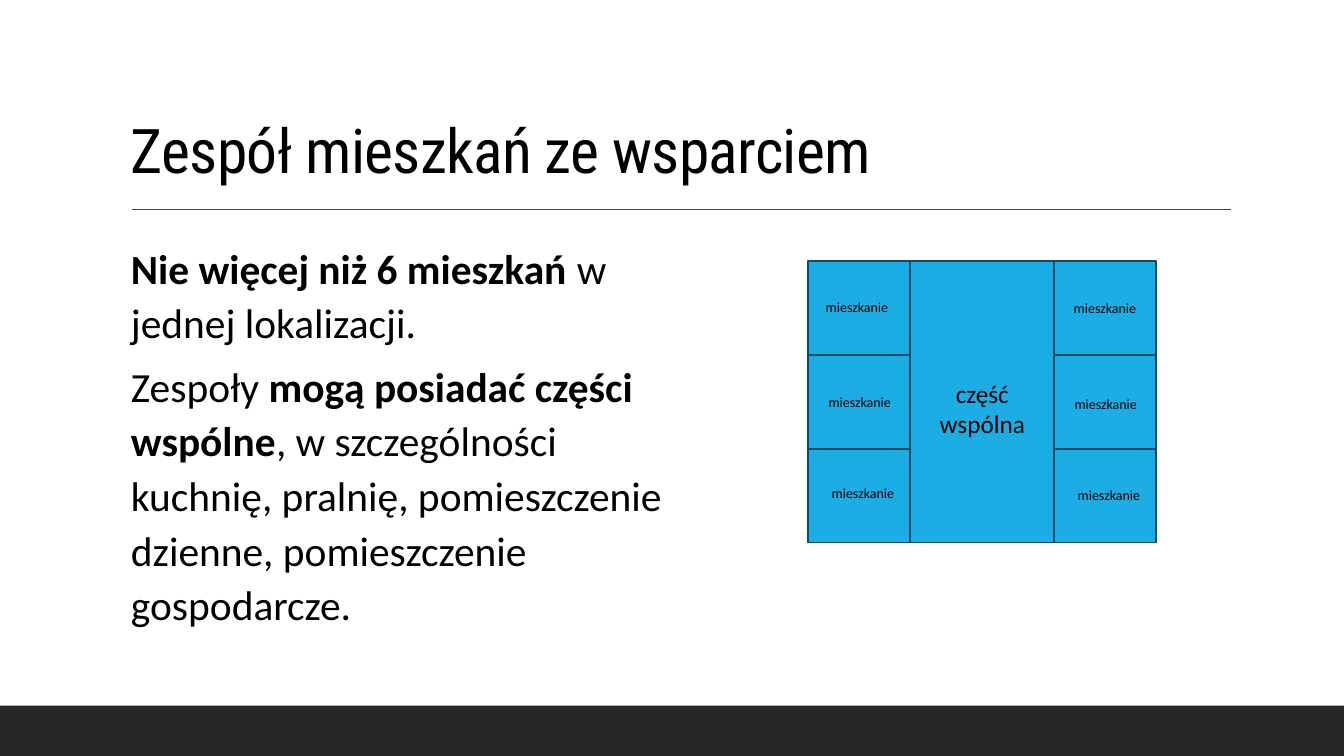
from lxml.etree import SubElement
from pptx import Presentation
from pptx.dml.color import RGBColor
from pptx.enum.shapes import MSO_CONNECTOR, MSO_SHAPE
from pptx.enum.text import MSO_ANCHOR, PP_ALIGN
from pptx.oxml.ns import qn
from pptx.util import Cm, Pt

COLORS = {"text": "000000", "footer": "262626", "rule": "404040",
          "room": "1CADE4", "wall": "0C4C64"}
BODY = [
    [("Nie więcej niż 6 mieszkań ", True), ("w jednej lokalizacji.", False)],
    [("Zespoły ", False), ("mogą posiadać części wspólne", True),
     (", w szczególności kuchnię, pralnię, pomieszczenie dzienne, "
      "pomieszczenie gospodarcze.", False)],
]
LABEL_OFFSETS = [[(0.03, 0.81), (0.1, 0.84), (0.18, 0.79)],
                 [(0.08, 0.84), (0.1, 0.89), (0.18, 0.84)]]


def color(name):
    return RGBColor.from_string(COLORS[name])


def add_rectangle(page, box, fill, line=None):
    shape = page.shapes.add_shape(MSO_SHAPE.RECTANGLE, *map(Cm, box))
    shape.shadow.inherit = False
    shape.fill.solid()
    shape.fill.fore_color.rgb = color(fill)
    if line:
        shape.line.color.rgb = color(line)
        shape.line.width = Pt(1.25)
    else:
        shape.line.fill.background()


def add_text_frame(page, box):
    frame = page.shapes.add_textbox(*map(Cm, box)).text_frame
    frame.word_wrap = True
    return frame


def style(para, size, name="Calibri"):
    para.font.size = Pt(size)
    para.font.name = name
    para.font.color.rgb = color("text")


def add_label(page, box, text, size):
    para = add_text_frame(page, box).paragraphs[0]
    para.text = text
    para.alignment = PP_ALIGN.CENTER
    style(para, size)


def add_title(page, box):
    left, top, width, height = box
    frame = add_text_frame(page, box)
    frame.vertical_anchor = MSO_ANCHOR.BOTTOM
    para = frame.paragraphs[0]
    para.line_spacing = 0.9
    style(para, 44, "Roboto Condensed")
    span = para.add_run()
    span.text = "Zespół mieszkań ze wsparciem"
    span.font._element.set("spc", "-50")

    rule_top = Cm(top + height + 0.45)
    rule = page.shapes.add_connector(
        MSO_CONNECTOR.STRAIGHT, Cm(left + 0.28), rule_top, Cm(left + width + 0.02), rule_top)
    rule.line.color.rgb = color("rule")
    rule.line.width = Pt(1)
    SubElement(rule._element.spPr, qn("a:effectLst"))


def add_body(page, box):
    frame = add_text_frame(page, box)
    frame.margin_left = Cm(0.25)
    frame.margin_right = 0
    for index, spans in enumerate(BODY):
        para = frame.add_paragraph() if index else frame.paragraphs[0]
        para.line_spacing = 1.1
        para.space_before = Pt(2)
        para.space_after = Pt(4)
        style(para, 29.6)
        for text, bold in spans:
            span = para.add_run()
            span.text = text
            span.font.bold = bold


def add_floor_plan(page, box):
    left, top, width, height = box
    room_width, room_height = 2.57, height / 3
    hall_width = width - 2 * room_width
    hall_left = left + room_width
    add_rectangle(page, (hall_left, top, hall_width, height), "room", "wall")
    add_label(page, (hall_left, top + 2.82, hall_width, 1.8), "część wspólna", 18)
    for side, offsets in enumerate(LABEL_OFFSETS):
        room_left = left + side * (room_width + hall_width)
        for row, (shift, drop) in enumerate(offsets):
            room_top = top + row * room_height
            add_rectangle(page, (room_left, room_top, room_width, room_height), "room", "wall")
            add_label(page, (room_left + shift, room_top + drop, 2.39, 0.68), "mieszkanie", 10)


def main():
    deck = Presentation()
    deck.slide_width, deck.slide_height = Cm(33.87), Cm(19.05)
    page = deck.slides.add_slide(deck.slide_layouts[6])
    add_rectangle(page, (0, 17.78, 33.87, 1.27), "footer")
    add_title(page, (3.05, 0.79, 27.94, 4.04))
    add_body(page, (3.05, 5.87, 13.89, 10.44))
    add_floor_plan(page, (20.37, 6.58, 8.77, 7.09))
    deck.save("out.pptx")


if __name__ == "__main__":
    main()
